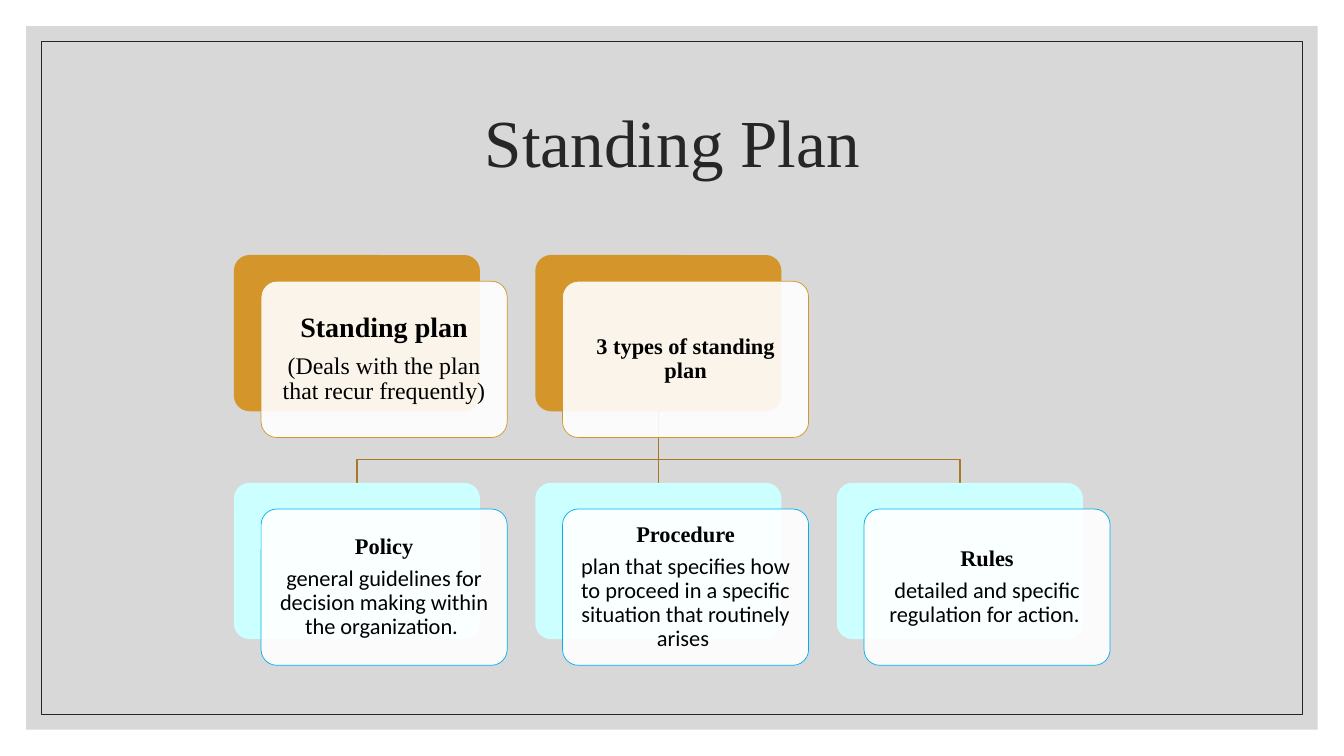
from lxml.etree import SubElement
from pptx import Presentation
from pptx.enum.shapes import MSO_CONNECTOR, MSO_SHAPE
from pptx.enum.text import MSO_ANCHOR, MSO_AUTO_SIZE, PP_ALIGN
from pptx.dml.color import RGBColor
from pptx.oxml.ns import qn
from pptx.util import Inches, Pt

SERIF, SANS = "Times New Roman", "Calibri"
GOLD, BROWN, AQUA, BLUE = "D4952A", "AA7722", "CCFFFF", "00B0F0"
WHITE, BLACK, GREY, DARK = "FFFFFF", "000000", "BFBFBF", "262626"

# Card grid
LEFT, COLUMN_STEP = 2.32, 2.99
TOP, ROW_STEP = 2.53, 2.26
CARD_WIDTH, CARD_HEIGHT = 2.44, 1.55
FRONT_SHIFT_X, FRONT_SHIFT_Y = 0.27, 0.26


def paint(fill, color, opacity=100):
    """Make a fill (of a shape, line or font) solid, with opacity in percent."""
    fill.solid()
    fill.fore_color.rgb = RGBColor.from_string(color)
    if opacity < 100:
        color_element = fill._xPr.find(qn("a:solidFill"))[0]
        SubElement(color_element, qn("a:alpha"), val=str(opacity * 1000))


def write(paragraph, text, size, font=SERIF, color=BLACK, bold=False, space_after=0):
    run = paragraph.add_run()
    run.text = text
    run.font.size = Pt(size)
    run.font.name = font
    run.font.bold = bold
    paint(run.font.fill, color)
    paragraph.alignment = PP_ALIGN.CENTER
    paragraph.line_spacing = 0.9
    paragraph.space_after = Pt(space_after)


presentation = Presentation()
presentation.slide_width = Inches(13.33)
presentation.slide_height = Inches(7.5)
slide = presentation.slides.add_slide(presentation.slide_layouts[5])
shapes = slide.shapes

# Background panel and its thin inner frame
for margin in (0.26, 0.41):
    panel = shapes.add_shape(
        MSO_SHAPE.RECTANGLE, Inches(margin), Inches(margin),
        presentation.slide_width - Inches(2 * margin),
        presentation.slide_height - Inches(2 * margin))
    panel.shadow.inherit = False
    if margin == 0.26:
        paint(panel.fill, GREY, opacity=60)
        panel.line.fill.background()
    else:
        panel.fill.background()
        paint(panel.line.fill, DARK)
        panel.line.width = Pt(0.5)

# Title, brought in front of the panel
title = shapes.title
title.left, title.top = Inches(1.17), Inches(0.7)
title.width, title.height = Inches(11), Inches(1.5)
title.text_frame.auto_size = MSO_AUTO_SIZE.NONE
title.text_frame.vertical_anchor = MSO_ANCHOR.MIDDLE
write(title.text_frame.paragraphs[0], "Standing Plan", 48, color=DARK)
shapes._spTree.append(title._element)

# Branches from the upper middle card to the lower row, behind the cards
centers = [Inches(LEFT + CARD_WIDTH / 2 + column * COLUMN_STEP) for column in range(3)]
trunk_x = centers[1]
trunk_top, bend, branch_end = Inches(TOP + CARD_HEIGHT), Inches(4.56), Inches(TOP + ROW_STEP)
for center in (centers[2], centers[0]):
    builder = shapes.build_freeform(trunk_x, trunk_top)
    builder.add_line_segments(
        [(trunk_x, bend), (center, bend), (center, branch_end)], close=False)
    branch = builder.convert_to_shape()
    branch.shadow.inherit = False
    branch.fill.background()
    paint(branch.line.fill, BROWN)
    branch.line.width = Pt(1)

trunk = shapes.add_connector(
    MSO_CONNECTOR.STRAIGHT, trunk_x, trunk_top, trunk_x, branch_end)
paint(trunk.line.fill, BROWN)
trunk.line.width = Pt(1)
SubElement(trunk._element.spPr, qn("a:effectLst"))

# Cards: row, column, heading, heading size, body, body size, body font
cards = [
    (0, 0, "Standing plan", 20, "(Deals with the plan that recur frequently)", 17, SERIF),
    (0, 1, "3 types of standing plan", 16, None, None, None),
    (1, 0, "Policy", 16,
     "general guidelines for decision making within the organization. ", 16, SANS),
    (1, 1, "Procedure", 16,
     "plan that specifies how to proceed in a specific situation that routinely arises ",
     16, SANS),
    (1, 2, "Rules", 16, "detailed and specific regulation for action. ", 16, SANS),
]
row_colors = [(GOLD, GOLD), (AQUA, BLUE)]
back_cards = {}
for row, column, heading, heading_size, body, body_size, body_font in cards:
    back_color, outline_color = row_colors[row]
    left, top = LEFT + column * COLUMN_STEP, TOP + row * ROW_STEP
    back, front = [
        shapes.add_shape(
            MSO_SHAPE.ROUNDED_RECTANGLE,
            Inches(left + layer * FRONT_SHIFT_X), Inches(top + layer * FRONT_SHIFT_Y),
            Inches(CARD_WIDTH), Inches(CARD_HEIGHT))
        for layer in range(2)]
    for card in (back, front):
        card.adjustments[0] = 0.1
        card.shadow.inherit = False
    paint(back.fill, back_color)
    back.line.fill.background()
    paint(front.fill, WHITE, opacity=90)
    paint(front.line.fill, outline_color)
    front.line.width = Pt(0.5)
    back_cards[row, column] = back

    frame = front.text_frame
    frame.word_wrap = True
    frame.vertical_anchor = MSO_ANCHOR.MIDDLE
    frame.margin_left = frame.margin_right = Inches(0.12)
    frame.margin_top = frame.margin_bottom = Inches(0.12)
    write(frame.paragraphs[0], heading, heading_size, bold=True,
          space_after=0.35 * heading_size)
    if body:
        write(frame.add_paragraph(), body, body_size, font=body_font,
              space_after=0.35 * body_size)

trunk.begin_connect(back_cards[0, 1], 2)
trunk.end_connect(back_cards[1, 1], 0)

presentation.save("out.pptx")
